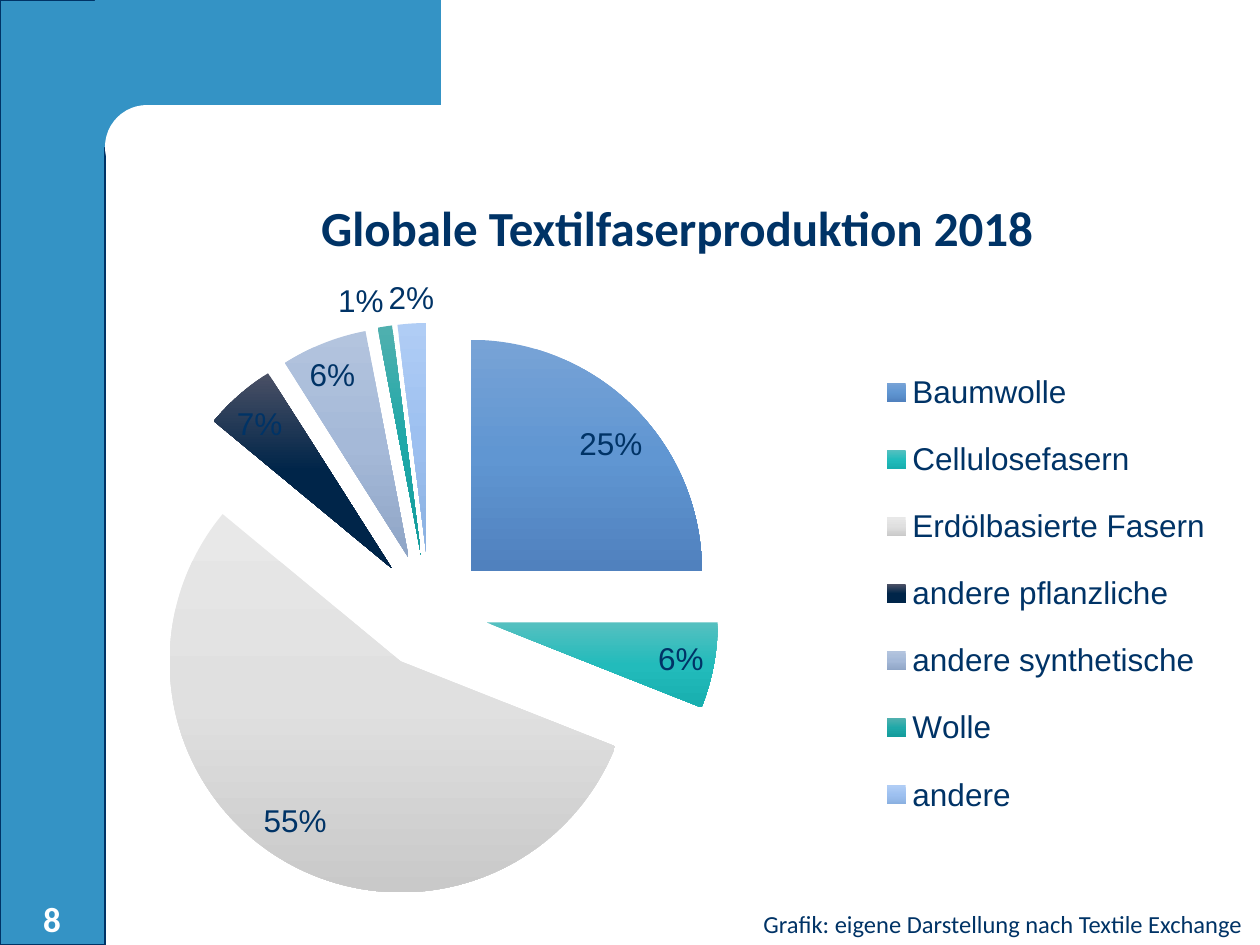
from copy import deepcopy

from lxml import etree
from pptx import Presentation
from pptx.chart.data import CategoryChartData
from pptx.dml.color import RGBColor
from pptx.enum.chart import XL_CHART_TYPE, XL_LABEL_POSITION, XL_LEGEND_POSITION
from pptx.enum.shapes import MSO_SHAPE
from pptx.enum.text import MSO_ANCHOR, PP_ALIGN
from pptx.oxml import parse_xml
from pptx.oxml.ns import nsdecls, qn
from pptx.util import Emu, Pt

PIE = XL_CHART_TYPE.PIE_EXPLODED
BEST_FIT = XL_LABEL_POSITION.BEST_FIT
RIGHT = XL_LEGEND_POSITION.RIGHT
RECTANGLE, ROUNDED = MSO_SHAPE.RECTANGLE, MSO_SHAPE.ROUNDED_RECTANGLE
TOP, BOTTOM = MSO_ANCHOR.TOP, MSO_ANCHOR.BOTTOM
LEFT, CENTER = PP_ALIGN.LEFT, PP_ALIGN.CENTER

# Content
TITLE = "Globale Textilfaserproduktion 2018"
PAGE_NUMBER = "8"
CREDIT = "Grafik: eigene Darstellung nach Textile Exchange"
NAVY, BLUE, WHITE = "003366", "3493C5", "FFFFFF"
# Fibre, share in percent, gradient from top to bottom
FIBRES = [
    ("Baumwolle", 25, ("78A3D6", "6096D2", "5081BE")),
    ("Cellulosefasern", 6, ("55C0C0", "22BBBB", "18AFAF")),
    ("Erdölbasierte Fasern", 55, ("E8E8E8", "E0E0E0", "C9C9C9")),
    ("andere pflanzliche", 5, ("4A5065", "002549", "00234A")),
    ("andere synthetische", 6, ("B3C4DE", "A5B9D8", "8FA5C6")),
    ("Wolle", 1, ("50B0AF", "1FA8A8", "149C9C")),
    ("andere", 2, ("B0CDF5", "9DC0F0", "8AB0E0")),
]
FIXED_LABELS = {3: "7%"}
EXPLOSION = 25
# Left, top, width, height in px
CHART_BOX = (-18, 262, 1295, 655)
PIE_BOX = (141, 323, 578, 578)
LEGEND_BOX = (875, 343, 340, 501)
# Shape, box, fill, outline
BACKDROP = [
    (RECTANGLE, (0, 0, 105, 945), BLUE, NAVY),
    (RECTANGLE, (95, 0, 346, 147), BLUE, None),
    (ROUNDED, (105, 105, 703, 84), WHITE, None),
]


def px(value):
    return Emu(round(value * 914400 / 126))


def color(value):
    return RGBColor.from_string(value)


def style_font(font, size, name, value, bold=False):
    font.size, font.name, font.bold = Pt(size), name, bold
    font.color.rgb = color(value)


def write_text(shape, text, size, value, bold, align, anchor):
    frame = shape.text_frame
    frame.text = text
    frame.word_wrap = True
    frame.vertical_anchor = anchor
    paragraph = frame.paragraphs[0]
    paragraph.alignment = align
    style_font(paragraph.runs[0].font, size, "Calibri", value, bold)


def place_in_chart(parent, box, inner=False):
    """Fix a chart part at a px box on the slide."""
    old = parent.find(qn("c:layout"))
    if old is not None:
        parent.remove(old)
    left, top, width, height = CHART_BOX
    fractions = {"x": (box[0] - left) / width, "y": (box[1] - top) / height,
                 "w": box[2] / width, "h": box[3] / height}
    layout = etree.Element(qn("c:layout"))
    manual = etree.SubElement(layout, qn("c:manualLayout"))
    if inner:
        etree.SubElement(manual, qn("c:layoutTarget")).set("val", "inner")
    for mode in ("xMode", "yMode"):
        etree.SubElement(manual, qn(f"c:{mode}")).set("val", "edge")
    for name, fraction in fractions.items():
        etree.SubElement(manual, qn(f"c:{name}")).set("val", f"{fraction:.3f}")
    if inner:
        parent.insert(0, layout)
    else:
        parent.find(qn("c:legendPos")).addnext(layout)


presentation = Presentation()
presentation.slide_width, presentation.slide_height = px(1260), px(945)
slide = presentation.slides.add_slide(presentation.slide_layouts[5])

# Blue corner with rounded inner edge
for kind, box, fill, outline in BACKDROP:
    shape = slide.shapes.add_shape(kind, *map(px, box))
    shape.shadow.inherit = False
    shape.fill.solid()
    shape.fill.fore_color.rgb = color(fill)
    if kind == ROUNDED:
        shape.adjustments[0] = 0.5
    if outline:
        shape.line.color.rgb = color(outline)
        shape.line.width = Pt(0.75)
    else:
        shape.line.fill.background()

# Title, moved in front of the corner
title = slide.shapes.title
title.left, title.top, title.width, title.height = map(px, (126, 175, 1102, 88))
write_text(title, TITLE, 28, NAVY, True, CENTER, BOTTOM)
slide.shapes._spTree.append(title._element)

# Page number
page_box = slide.shapes.add_textbox(*map(px, (0, 891, 104, 55)))
write_text(page_box, PAGE_NUMBER, 20, WHITE, True, CENTER, BOTTOM)

# Exploded pie
data = CategoryChartData()
data.categories = [fibre[0] for fibre in FIBRES]
data.add_series("Series 1", [fibre[1] for fibre in FIBRES])
chart = slide.shapes.add_chart(PIE, *map(px, CHART_BOX), data).chart
chart.has_title = False
style_font(chart.font, 18, "Arial", NAVY)
plot = chart.plots[0]
plot.vary_by_categories = True
series = plot.series[0]
for old in series._element.findall(qn("c:explosion")):
    series._element.remove(old)
explosion = parse_xml(f'<c:explosion {nsdecls("c")} val="{EXPLOSION}"/>')
series._element.find(qn("c:tx")).addnext(explosion)
for index, (_, _, shades) in enumerate(FIBRES):
    point_format = series.points[index].format
    point_format.line.fill.background()
    point_format.fill.gradient()
    point_format.fill.gradient_angle = 270
    # A middle stop is added to the default two
    point_xml = series._element.findall(qn("c:dPt"))[index]
    first_stop = point_xml.find(".//" + qn("a:gs"))
    first_stop.addnext(deepcopy(first_stop))
    stops = point_format.fill.gradient_stops
    for stop, position, value in zip(stops, (0, 0.5, 1), shades):
        stop.position = position
        stop.color.rgb = color(value)

# Percent labels
labels = series.data_labels
labels.show_percentage, labels.show_value = True, False
labels.number_format, labels.number_format_is_linked = "0%", False
labels.position = BEST_FIT
style_font(labels.font, 18, "Arial", NAVY)
for index, text in FIXED_LABELS.items():
    label = series.points[index].data_label
    label.text_frame.text = text
    style_font(label.text_frame.paragraphs[0].runs[0].font, 18, "Arial", NAVY)
    label.position = BEST_FIT

# Legend and pie placement
chart.has_legend = True
chart.legend.position = RIGHT
chart.legend.include_in_layout = False
style_font(chart.legend.font, 18, "Arial", NAVY)
place_in_chart(chart.legend._element, LEGEND_BOX)
place_in_chart(chart._chartSpace.find(".//" + qn("c:plotArea")), PIE_BOX, inner=True)

# Credit
credit_box = slide.shapes.add_textbox(*map(px, (751, 903, 512, 43)))
write_text(credit_box, CREDIT, 14, NAVY, False, LEFT, TOP)

presentation.save("out.pptx")
